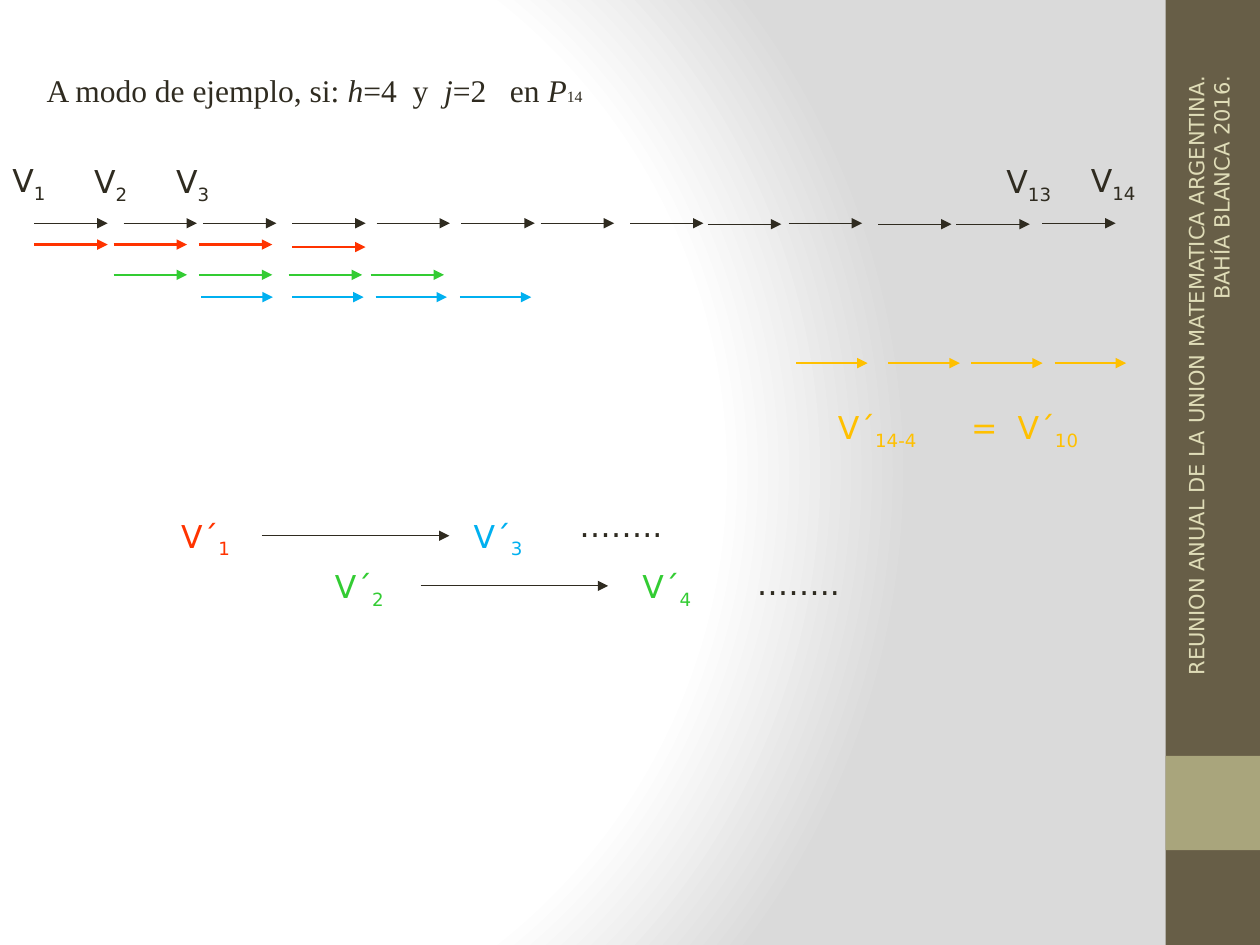
from lxml import etree
from pptx import Presentation
from pptx import util as u
from pptx.dml.color import RGBColor
from pptx.enum import shapes, text
from pptx.oxml import parse_xml
from pptx.oxml.ns import nsdecls, qn

DARK = RGBColor(0x2F, 0x2B, 0x20)
RED = RGBColor(0xFF, 0x33, 0x00)
GREEN = RGBColor(0x33, 0xCC, 0x33)
BLUE = RGBColor(0x00, 0xB0, 0xF0)
GOLD = RGBColor(0xFF, 0xC0, 0x00)
BROWN = RGBColor(0x67, 0x5E, 0x47)
KHAKI = RGBColor(0xA9, 0xA5, 0x7C)
CREAM = RGBColor(0xDF, 0xDC, 0xB7)

BACKGROUND = f"""<p:bg {nsdecls('p', 'a')}><p:bgPr><a:gradFill rotWithShape="1"><a:gsLst>
<a:gs pos="0"><a:srgbClr val="FFFFFF"/></a:gs>
<a:gs pos="75000"><a:srgbClr val="FFFFFF"/></a:gs>
<a:gs pos="100000"><a:srgbClr val="DADADA"/></a:gs></a:gsLst>
<a:path path="circle"><a:fillToRect l="20000" t="50000" r="100000" b="50000"/></a:path>
</a:gradFill><a:effectLst/></p:bgPr></p:bg>"""


def add_run(p, content, size=18, font="DejaVu Sans", color=DARK, italic=False, sub=False):
    r = p.add_run()
    r.text = content
    r.font.size = u.Pt(size)
    r.font.name = font
    r.font.color.rgb = color
    r.font.italic = italic
    if sub:
        r.font._element.set("baseline", "-25000")


class Board:
    """Holds the current slide and draws its kinds of element, in centimetres."""

    def __init__(self, s):
        self.s = s

    def background(self):
        self.s.element.cSld.insert(0, parse_xml(BACKGROUND))

    def band(self, x, y, w, h, color):
        sp = self.s.shapes.add_shape(shapes.MSO_SHAPE.RECTANGLE,
                                     u.Cm(x), u.Cm(y), u.Cm(w), u.Cm(h))
        sp.shadow.inherit = False
        sp.fill.solid()
        sp.fill.fore_color.rgb = color
        sp.line.fill.background()

    def arrow(self, x, y, length, color=DARK, width=0.75):
        cx = self.s.shapes.add_connector(shapes.MSO_CONNECTOR.STRAIGHT,
                                         u.Cm(x), u.Cm(y), u.Cm(x + length), u.Cm(y))
        cx.line.color.rgb = color
        cx.line.width = u.Pt(width)
        etree.SubElement(cx.line._get_or_add_ln(), qn("a:tailEnd"), type="triangle")
        etree.SubElement(cx._element.spPr, qn("a:effectLst"))

    def textbox(self, x, y, w, runs, h=1.02, **style):
        """Each run is a pair of its text and its own format."""
        sp = self.s.shapes.add_textbox(u.Cm(x), u.Cm(y), u.Cm(w), u.Cm(h))
        tf = sp.text_frame
        tf.word_wrap = True
        for content, own in runs:
            add_run(tf.paragraphs[0], content, **{**style, **own})
        return sp

    def vector(self, x, y, w, name, index, color=DARK):
        self.textbox(x, y, w, [(name, {}), (index, {"sub": True})], color=color)


def main():
    prs = Presentation()
    prs.slide_width, prs.slide_height = u.Cm(25.4), u.Cm(19.05)
    board = Board(prs.slides.add_slide(prs.slide_layouts[6]))

    # Background and side band
    board.background()
    board.band(23.5, 0, 1.9, 19.05, BROWN)
    board.band(23.5, 15.24, 1.9, 1.9, KHAKI)
    sp = board.textbox(17.48, 7.65, 13.77, [
        ("REUNION ANUAL DE LA UNION MATEMATICA ARGENTINA. BAHÍA BLANCA 2016.", {}),
    ], size=12, color=CREAM)
    sp.rotation = 270
    sp.text_frame.vertical_anchor = text.MSO_ANCHOR.MIDDLE
    sp.text_frame.paragraphs[0].alignment = text.PP_ALIGN.RIGHT

    # Heading
    italic = {"italic": True}
    board.textbox(0.69, 1.3, 21.06, [
        ("A modo de ejemplo, si: ", {}), ("h", italic), ("=4  y  ", {}),
        ("j", italic), ("=2   en ", {}), ("P", italic), ("14", {"size": 9}),
    ], font="Times New Roman")

    # Rows of arrows: y, length, colour, line width, starts
    rows = [
        (4.5, 1.48, DARK, 0.75, [0.69, 2.49, 4.09, 5.89, 7.59, 9.3, 10.9, 12.7, 15.9, 21.01]),
        (4.52, 1.48, DARK, 0.75, [14.27, 17.7, 19.28]),
        (4.93, 1.48, RED, 1.5, [0.69, 2.29, 4.01]),
        (4.98, 1.48, RED, 1.5, [5.89]),
        (5.54, 1.48, GREEN, 1.5, [2.29, 4.01, 5.82, 7.47]),
        (5.99, 1.44, BLUE, 1.5, [4.06, 5.89, 7.57, 9.27]),
        (7.32, 1.44, GOLD, 1.5, [16.05, 17.91, 19.58, 21.26]),
        (10.8, 3.78, DARK, 0.75, [5.28]),
        (11.81, 3.78, DARK, 0.75, [8.48]),
    ]
    for y, length, color, width, starts in rows:
        for x in starts:
            board.arrow(x, y, length, color, width)

    # Names of the original vectors
    for x, y, w, index in [(0, 3.12, 1.42, "1"), (1.65, 3.15, 1.42, "2"), (3.3, 3.15, 1.45, "3"),
                           (20.04, 3.15, 1.7, "13"), (21.74, 3.12, 2.16, "14")]:
        board.vector(x, y, w, "V", index)

    # Names of the grouped vectors
    for x, y, w, name, index, color in [
        (3.4, 10.29, 1.88, "V´", "1", RED),
        (6.5, 11.3, 1.8, "V´", "2", GREEN),
        (9.3, 10.29, 2.34, "V´", "3", BLUE),
        (12.7, 11.3, 1.8, "V´", "4", GREEN),
        (16.64, 8.1, 2.69, "V´", "14-4", GOLD),
        (19.33, 8.1, 3.38, "=  V´", "10", GOLD),
    ]:
        board.vector(x, y, w, name, index, color)

    # Continuation dots
    for x, y in [(11.43, 10.08), (15.01, 11.25)]:
        board.textbox(x, y, 2.54, [("……..", {})])

    prs.save("out.pptx")


if __name__ == "__main__":
    main()
